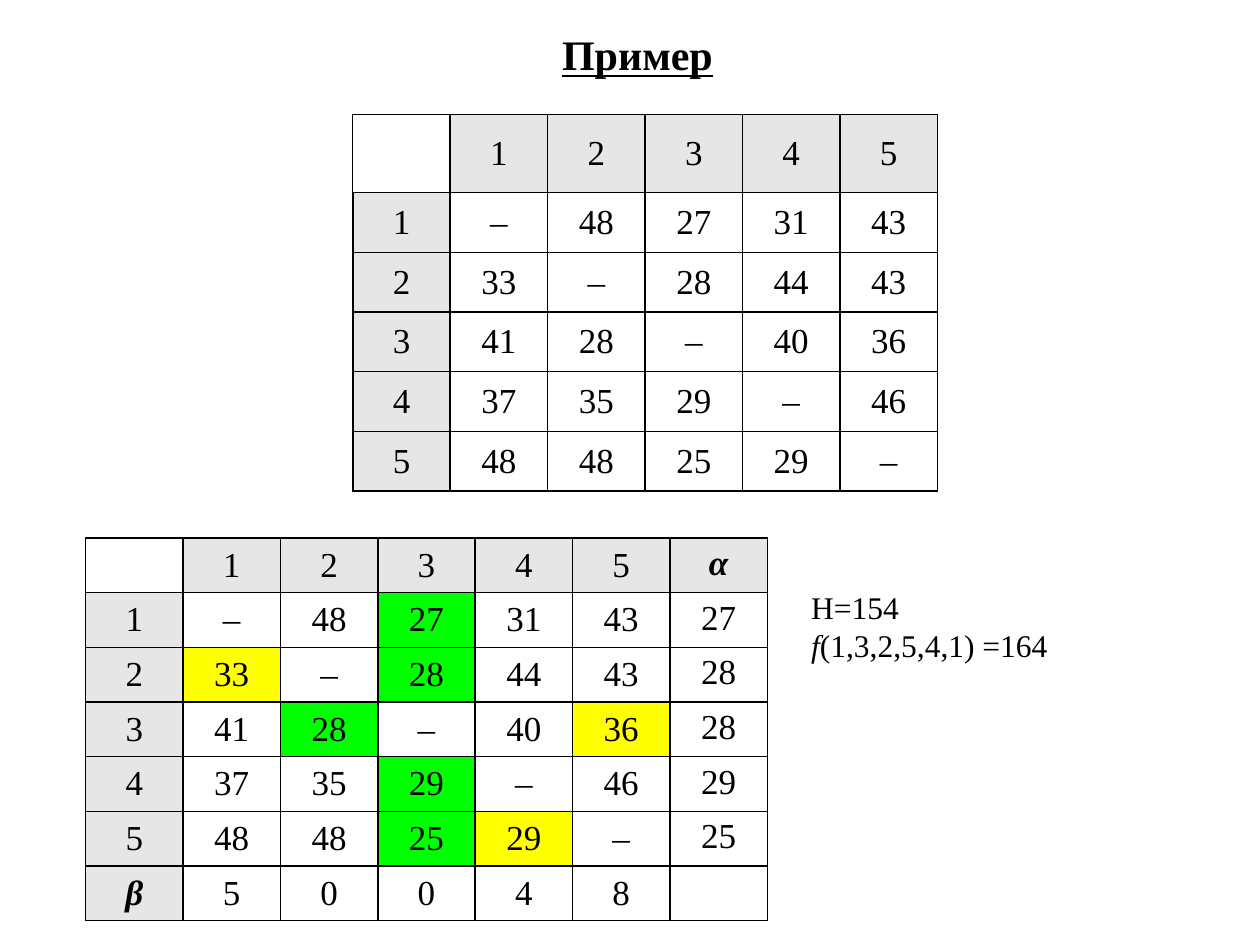
from lxml import etree
from pptx import Presentation
from pptx.dml.color import RGBColor
from pptx.enum import text as t
from pptx.oxml import ns
from pptx.util import Inches, Pt

HUES = {"ink": "000000", "head": "E6E6E6", "low": "00FF00", "pick": "FFFF00"}
COSTS = [
    ["–", "48", "27", "31", "43"],
    ["33", "–", "28", "44", "43"],
    ["41", "28", "–", "40", "36"],
    ["37", "35", "29", "–", "46"],
    ["48", "48", "25", "29", "–"],
]
ALPHA = ["27", "28", "28", "29", "25"]
BETA = ["5", "0", "0", "4", "8"]
HEADS = ["1", "2", "3", "4", "5"]
# Row and column of the marked cells
MARKS = {(1, 3): "low", (2, 3): "low", (3, 2): "low", (4, 3): "low", (5, 3): "low",
         (2, 1): "pick", (3, 5): "pick", (5, 4): "pick"}


def style(run, **form):
    form = {"name": "Times New Roman", "size": Pt(20), **form}
    for key, val in form.items():
        setattr(run.font, key, val)
    run.font.color.rgb = RGBColor.from_string(HUES["ink"])


def write(par, words, **form):
    run = par.add_run()
    run.text = words
    style(run, **form)


def edge(cell, thin):
    """Draw the four borders; thin lists the sides with a finer line."""
    props = cell._tc.get_or_add_tcPr()
    for side in "LRTB":
        width = Pt(0.75 if side in thin else 1)
        line = etree.SubElement(props, ns.qn("a:ln" + side), w=str(width))
        fill = etree.SubElement(line, ns.qn("a:solidFill"))
        etree.SubElement(fill, ns.qn("a:srgbClr"), val=HUES["ink"])


def grid(slide, box, rows, highs, marks):
    """Cost matrix with shaded row and column headings."""
    left, top, width, height = map(Inches, box)
    count = len(rows[0])
    table = slide.shapes.add_table(len(rows), count, left, top, width, height).table
    table.first_row = table.horz_banding = False
    for col in table.columns:
        col.width = int(width / count)
    for row, high in zip(table.rows, highs):
        row.height = Inches(high)
    for i, row in enumerate(rows):
        for j, words in enumerate(row):
            cell = table.cell(i, j)
            edge(cell, "LT" if i == j == 0 else "")
            hue = "head" if words and 0 in (i, j) else marks.get((i, j))
            if hue:
                cell.fill.solid()
                cell.fill.fore_color.rgb = RGBColor.from_string(HUES[hue])
            else:
                cell.fill.background()
            # The α column sits at the top of its cells
            cell.vertical_anchor = t.MSO_ANCHOR.TOP if j == 6 else t.MSO_ANCHOR.MIDDLE
            if words:
                par = cell.text_frame.paragraphs[0]
                par.alignment = t.PP_ALIGN.CENTER
                greek = words in ("α", "β")
                write(par, words, bold=greek, italic=greek)


def title(slide, box):
    head = slide.shapes.title
    head.left, head.top, head.width, head.height = map(Inches, box)
    frame = head.text_frame
    form = {"word_wrap": False, "vertical_anchor": t.MSO_ANCHOR.TOP,
            "auto_size": t.MSO_AUTO_SIZE.SHAPE_TO_FIT_TEXT}
    for key, val in form.items():
        setattr(frame, key, val)
    par = frame.paragraphs[0]
    par.alignment = t.PP_ALIGN.CENTER
    write(par, "Пример", size=Pt(24), bold=True, underline=True)


def result(slide, box):
    frame = slide.shapes.add_textbox(*map(Inches, box)).text_frame
    frame.word_wrap = True
    frame.auto_size = t.MSO_AUTO_SIZE.SHAPE_TO_FIT_TEXT
    write(frame.paragraphs[0], "H=154", size=Pt(18))
    par = frame.add_paragraph()
    write(par, "f", size=Pt(18), italic=True)
    write(par, "(1,3,2,5,4,1) =164", size=Pt(18))


def main():
    deck = Presentation()
    deck.slide_width, deck.slide_height = Inches(10), Inches(7.5)
    slide = deck.slides.add_slide(deck.slide_layouts[5])
    title(slide, (4.36, 0.18, 1.4, 0.5))

    # Given costs
    body = [[name] + row for name, row in zip(HEADS, COSTS)]
    grid(slide, (2.8, 0.91, 4.64, 2.99), [[""] + HEADS] + body,
         [0.62] + [0.474] * 5, {})

    # Costs with row minima α and column minima β
    full = [[""] + HEADS + ["α"]]
    full += [row + [low] for row, low in zip(body, ALPHA)]
    full.append(["β"] + BETA + [""])
    grid(slide, (0.68, 4.27, 5.41, 3.03), full, [3.03 / 7] * 7, MARKS)

    result(slide, (6.34, 4.62, 3.54, 0.7))
    deck.save("out.pptx")


if __name__ == "__main__":
    main()
